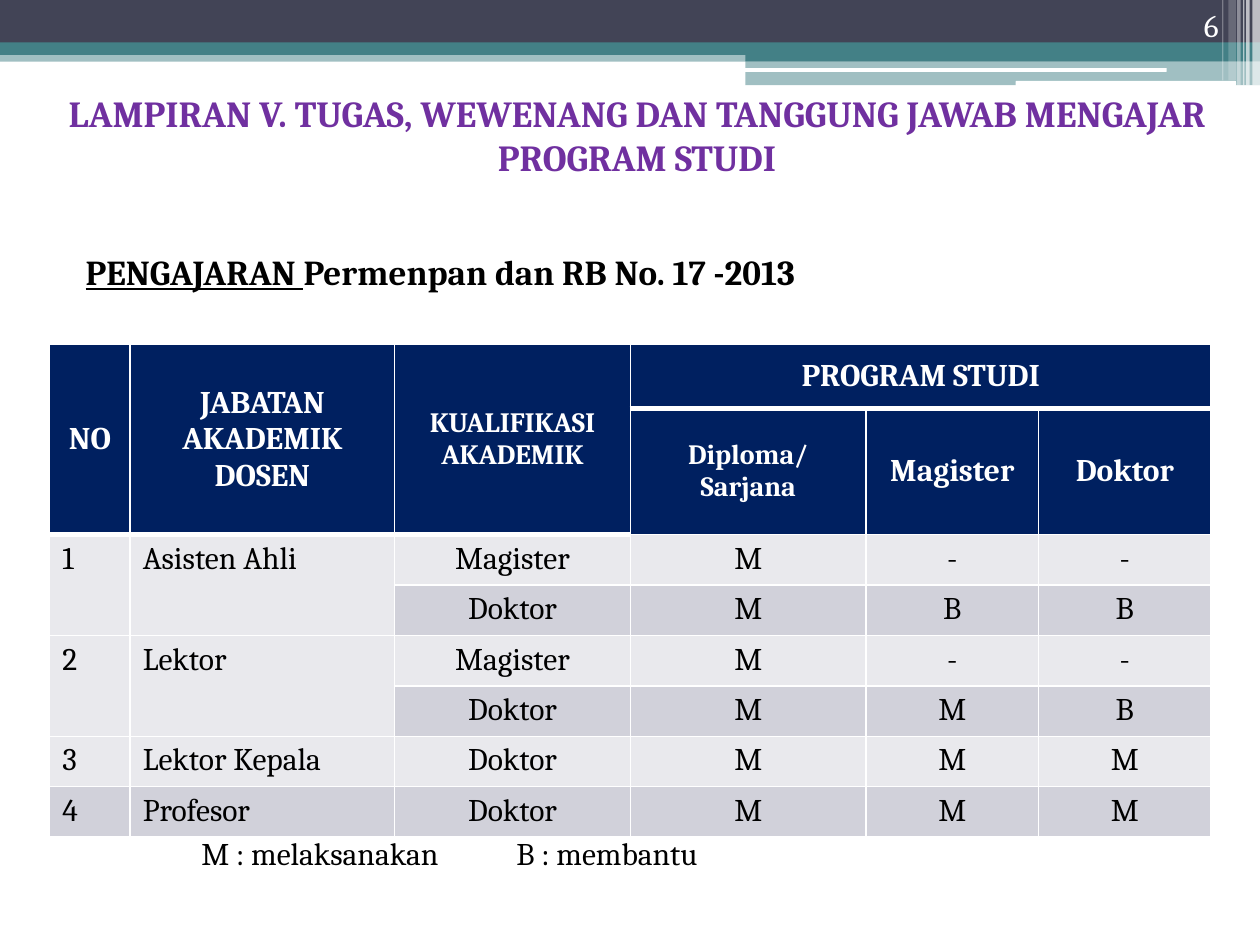
import pptx
import pptx.util
import pptx.dml.color
import pptx.enum.shapes
import pptx.enum.text
import pptx.oxml
import pptx.oxml.ns
import lxml.etree

Pt = pptx.util.Pt
RGB = pptx.dml.color.RGBColor
KIND = pptx.enum.shapes.MSO_SHAPE
ALIGN = pptx.enum.text.PP_ALIGN
ANCHOR = pptx.enum.text.MSO_ANCHOR
FIT = pptx.enum.text.MSO_AUTO_SIZE
qn = pptx.oxml.ns.qn

FONT = "Cambria"
WHITE = RGB(0xFF, 0xFF, 0xFF)
BLACK = RGB(0, 0, 0)
SLATE = RGB(0x42, 0x44, 0x56)
TEAL = RGB(0x43, 0x80, 0x86)
PURPLE = RGB(0x70, 0x30, 0xA0)
NAVY = RGB(0x00, 0x20, 0x60)
LIGHT = RGB(0xE9, 0xE9, 0xED)
DARK = RGB(0xD1, 0xD1, 0xDA)

COLS = [46, 151.2, 134.7, 134.7, 98.6, 98.6]
ROWS = [36.5, 35.3] + [28.8] * 6
DATA = [
    ["NO", "JABATAN AKADEMIK DOSEN", "KUALIFIKASI AKADEMIK", "PROGRAM STUDI", "", ""],
    ["", "", "", "Diploma/\nSarjana", "Magister", "Doktor"],
    ["1", "Asisten Ahli", "Magister", "M", "-", "-"],
    ["", "", "Doktor", "M", "B", "B"],
    ["2", "Lektor", "Magister", "M", "-", "-"],
    ["", "", "Doktor", "M", "M", "B"],
    ["3", "Lektor Kepala", "Doktor", "M", "M", "M"],
    ["4", "Profesor", "Doktor", "M", "M", "M"],
]
# first row, first column, last row, last column
SPANS = [(0, 0, 1, 0), (0, 1, 1, 1), (0, 2, 1, 2), (0, 3, 0, 5),
         (2, 0, 3, 0), (2, 1, 3, 1), (4, 0, 5, 0), (4, 1, 5, 1)]
SMALL = {(0, 2), (1, 3)}


def style(frame, size, color, bold=False, align=None):
    for para in frame.paragraphs:
        para.alignment = align
        for run in para.runs:
            font = run.font
            font.name, font.size, font.bold = FONT, Pt(size), bold
            font.color.rgb = color


def place(shape, box):
    shape.left, shape.top, shape.width, shape.height = map(Pt, box)


def bar(slide, box, color, alpha=100, kind=KIND.RECTANGLE):
    shape = slide.shapes.add_shape(kind, *map(Pt, box))
    shape.shadow.inherit = False
    shape.fill.solid()
    shape.fill.fore_color.rgb = color
    shape.line.fill.background()
    if alpha < 100:
        tint = shape.fill._xPr.find(qn("a:solidFill"))[0]
        lxml.etree.SubElement(tint, qn("a:alpha")).set("val", str(alpha * 1000))


def banner(slide, box):
    x, y, w, h = box
    # Full-width bands
    bar(slide, (x, y + 28.8, w, 6.5), TEAL, 50)
    bar(slide, (x, y, w, 24.5), SLATE)
    bar(slide, (x, y + 24.2, w, 7.2), TEAL)
    # Right-hand step
    left = x + 426
    bar(slide, (left, y + 28, x + w - left, 7), TEAL)
    bar(slide, (left, y + 34.7, x + w - left, 14), TEAL, 50)
    for dx, dy, wide, high in [(425.5, 38.9, 241.2, 2.2), (580.3, 46.3, 126, 2.9)]:
        bar(slide, (x + dx, y + dy, wide, high), WHITE, kind=KIND.ROUNDED_RECTANGLE)
    # Pale stripes: distance from right edge, width, height, opacity
    for back, wide, high, alpha in [(4.3, 4.3, h, 65), (7.9, 2, h, 65),
                                    (9.6, 0.7, h, 60), (13, 2, h, 40),
                                    (18, 4.3, 46, 20), (21.6, 0.7, 46, 30)]:
        bar(slide, (x + w - back, y, wide, high), WHITE, alpha)


def title(slide, box):
    shape = slide.shapes.title
    place(shape, box)
    frame = shape.text_frame
    frame.text = "LAMPIRAN V. TUGAS, WEWENANG DAN TANGGUNG JAWAB MENGAJAR PROGRAM STUDI"
    frame.auto_size = FIT.NONE
    frame.vertical_anchor = ANCHOR.MIDDLE
    style(frame, 21, PURPLE, True, ALIGN.CENTER)


def label(slide, box, text, size, color, bold=False, align=None):
    frame = slide.shapes.add_textbox(*map(Pt, box)).text_frame
    frame.word_wrap = True
    frame.text = text
    style(frame, size, color, bold, align)
    return frame


def heading(slide, box):
    frame = label(slide, box, "PENGAJARAN ", 20, BLACK, True)
    frame.paragraphs[0].add_run().text = "Permenpan dan RB No. 17 -2013"
    style(frame, 20, BLACK, True)
    frame.paragraphs[0].runs[0].font.underline = True


def number(slide, box):
    frame = label(slide, box, "6", 18, WHITE, align=ALIGN.RIGHT)
    frame.vertical_anchor = ANCHOR.BOTTOM


def border(cell, thick):
    props = cell._tc.get_or_add_tcPr()
    for spot, side in enumerate("LRTB"):
        width = Pt(thick if side == "B" else 1)
        line = pptx.oxml.parse_xml(
            f'<a:ln{side} {pptx.oxml.ns.nsdecls("a")} w="{width}"><a:solidFill>'
            f'<a:srgbClr val="{WHITE}"/></a:solidFill></a:ln{side}>')
        props.insert(spot, line)


def grid(slide, box):
    table = slide.shapes.add_table(len(ROWS), len(COLS), *map(Pt, box)).table
    for col, wide in zip(table.columns, COLS):
        col.width = Pt(wide)
    for row, high in zip(table.rows, ROWS):
        row.height = Pt(high)
    for top, left, low, right in SPANS:
        table.cell(top, left).merge(table.cell(low, right))
    for r, line in enumerate(DATA):
        head = r < 2
        for c, text in enumerate(line):
            cell = table.cell(r, c)
            cell.text = text
            cell.fill.solid()
            cell.fill.fore_color.rgb = NAVY if head else DARK if r % 2 else LIGHT
            cell.vertical_anchor = ANCHOR.MIDDLE if head else ANCHOR.TOP
            style(cell.text_frame, 16 if (r, c) in SMALL else 18,
                  WHITE if head else BLACK, head,
                  ALIGN.CENTER if head or c > 1 else ALIGN.LEFT)
            border(cell, 3 if r == 0 or (r == 1 and c < 3) else 1)


def main():
    deck = pptx.Presentation()
    deck.slide_width, deck.slide_height = Pt(720), Pt(540)
    slide = deck.slides.add_slide(deck.slide_layouts[5])
    banner(slide, (0, 0, 720, 49))
    number(slide, (643.7, 0, 59.8, 28.8))
    title(slide, (5.8, 51.1, 716.4, 51.8))
    heading(slide, (41.8, 139.7, 638.6, 31.7))
    label(slide, (108, 473, 578.2, 28.8),
          "M : melaksanakan \t\tB : membantu", 18, BLACK)
    grid(slide, (28.4, 196.9, sum(COLS), sum(ROWS)))
    deck.save("out.pptx")


if __name__ == "__main__":
    main()
